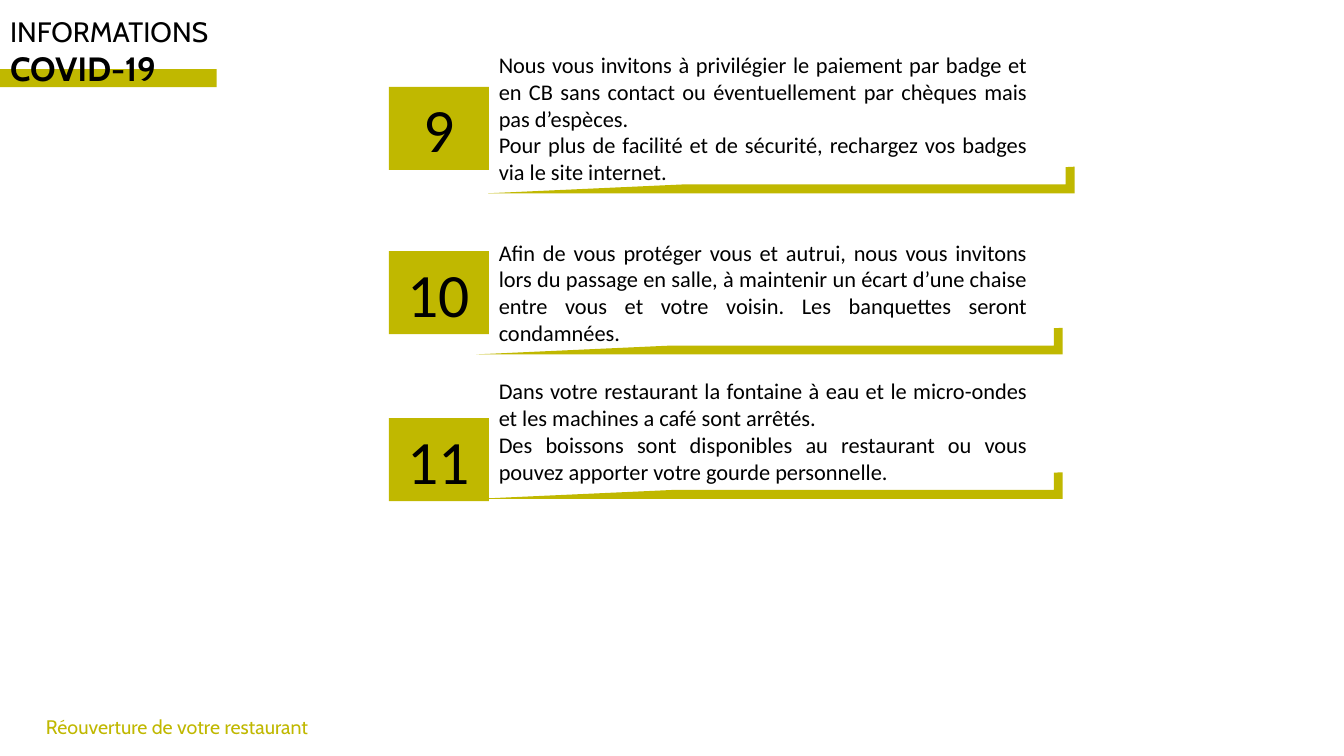
from pptx import Presentation
from pptx.dml.color import RGBColor
from pptx.enum.shapes import MSO_SHAPE as SHAPE
from pptx.enum.text import MSO_ANCHOR as ANCHOR, MSO_AUTO_SIZE as AUTO, PP_ALIGN as ALIGN
from pptx.util import Cm, Pt

OLIVE = RGBColor(0xC0, 0xB8, 0x00)
BLACK = RGBColor(0, 0, 0)

TITLE = [("INFORMATIONS", 20, False), ("COVID-19", 24, True)]
FOOTER = "Réouverture de votre restaurant"

# number, paragraphs, square top, text top, text height, frame left, frame top (cm)
RULES = [
    ("9", ["Nous vous invitons à privilégier le paiement par badge et en CB sans contact "
           "ou éventuellement par chèques mais pas d’espèces.",
           "Pour plus de facilité et de sécurité, rechargez vos badges via le site internet."],
     2.19, 1.16, 3.69, 12.3, 4.2),
    ("10", ["Afin de vous protéger vous et autrui, nous vous invitons lors du passage en salle, "
            "à maintenir un écart d’une chaise entre vous et votre voisin. "
            "Les banquettes seront condamnées."],
     6.33, 5.89, 3.0, 12.0, 8.26),
    ("11", ["Dans votre restaurant la fontaine à eau et le micro-ondes et les machines a café "
            "sont arrêtés.",
            "Des boissons sont disponibles au restaurant ou vous pouvez apporter votre gourde "
            "personnelle."],
     10.54, 9.38, 3.0, 12.0, 11.9),
]
SQUARE_LEFT, SQUARE_W, SQUARE_H = 9.8, 2.52, 2.09
TEXT_LEFT, TEXT_W = SQUARE_LEFT + SQUARE_W, 13.82
FRAME_W, FRAME_H = 14.78, 0.67


def write(sp, lines, font="Calibri", color=BLACK, align=ALIGN.LEFT, anchor=ANCHOR.TOP):
    """Fill a shape with (text, size, bold) lines, one paragraph each."""
    tf = sp.text_frame
    tf.word_wrap = True
    tf.auto_size = AUTO.NONE
    tf.vertical_anchor = anchor
    for i, (text, size, bold) in enumerate(lines):
        p = tf.add_paragraph() if i else tf.paragraphs[0]
        p.alignment = align
        r = p.add_run()
        r.text = text
        r.font.name, r.font.size, r.font.bold = font, Pt(size), bold
        r.font.color.rgb = color


def add_olive(s, kind, left, top, width, height):
    sp = s.shapes.add_shape(kind, Cm(left), Cm(top), Cm(width), Cm(height))
    sp.shadow.inherit = False
    sp.fill.solid()
    sp.fill.fore_color.rgb = OLIVE
    sp.line.fill.background()
    return sp


def add_text(s, left, top, width, height, lines, **style):
    write(s.shapes.add_textbox(Cm(left), Cm(top), Cm(width), Cm(height)), lines, **style)


def add_rule(s, number, paragraphs, square_top, text_top, text_h, frame_left, frame_top):
    square = add_olive(s, SHAPE.RECTANGLE, SQUARE_LEFT, square_top, SQUARE_W, SQUARE_H)
    square.text_frame.margin_left = square.text_frame.margin_right = 0
    write(square, [(number, 44, False)], align=ALIGN.CENTER, anchor=ANCHOR.MIDDLE)
    add_text(s, TEXT_LEFT, text_top, TEXT_W, text_h,
             [(text, 16, False) for text in paragraphs], align=ALIGN.JUSTIFY)
    frame = add_olive(s, SHAPE.HALF_FRAME, frame_left, frame_top, FRAME_W, FRAME_H)
    frame.rotation = 180


def main():
    prs = Presentation()
    prs.slide_width, prs.slide_height = Cm(33.87), Cm(19.05)
    s = prs.slides.add_slide(prs.slide_layouts[5])

    title = s.shapes.title
    title.left, title.top, title.width, title.height = Cm(0), Cm(0.23), Cm(7.14), Cm(2.13)
    write(title, TITLE, font="Cabin")
    band = add_olive(s, SHAPE.RECTANGLE, 0, 1.74, 5.46, 0.46)
    band._element.addnext(title._element)  # the title lies over its band

    add_text(s, 0.91, 17.88, 9, 0.86, [(FOOTER, 14, False)], font="Cabin", color=OLIVE)
    for rule in RULES:
        add_rule(s, *rule)
    prs.save("out.pptx")


if __name__ == "__main__":
    main()
